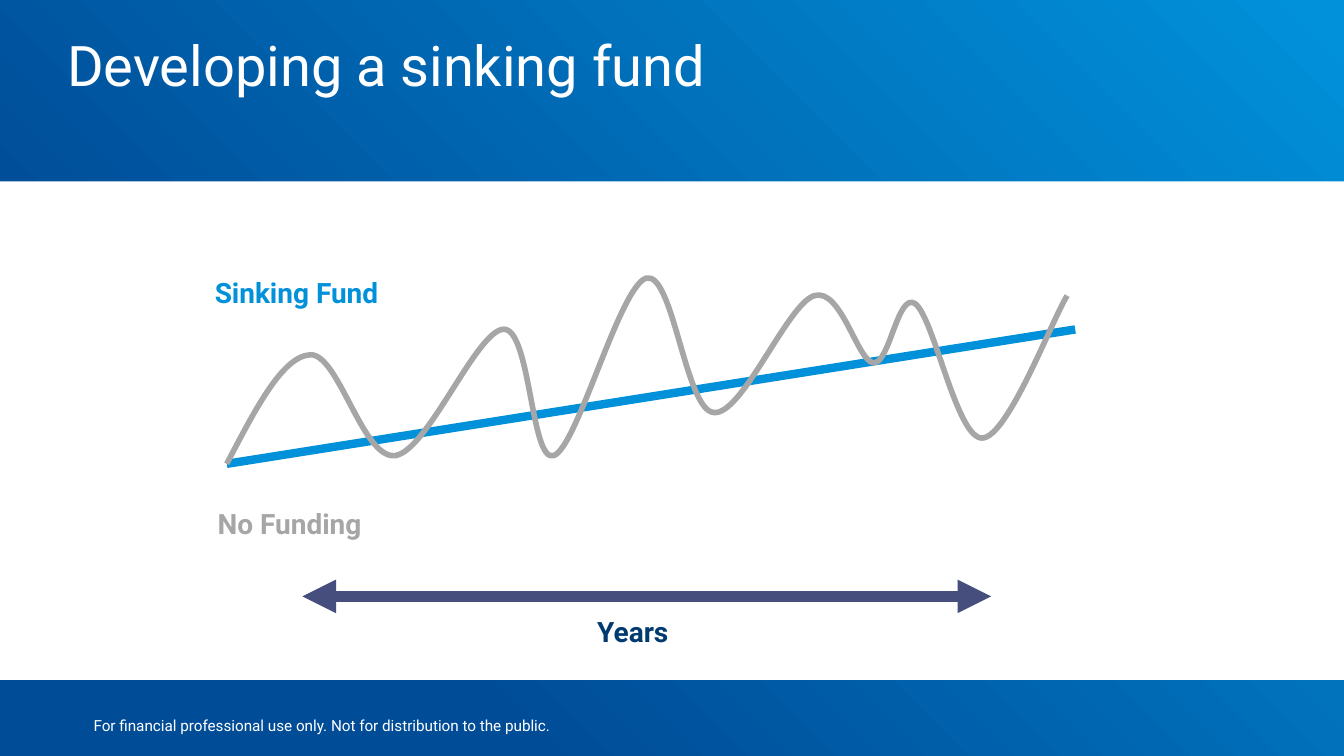
from dataclasses import dataclass

from lxml.etree import SubElement
from pptx import Presentation
from pptx.dml.color import RGBColor
from pptx.enum.shapes import MSO_CONNECTOR as CONN, MSO_SHAPE as SHAPE
from pptx.enum.text import MSO_ANCHOR as ANCHOR, PP_ALIGN as ALIGN
from pptx.oxml.ns import qn
from pptx.util import Pt

W, H = 720, 405
NAVY, BLUE, GREY, WHITE = "004C97", "0091DA", "A6A6A6", "FFFFFF"
INDIGO, DEEP = "464E7E", "003A6E"


@dataclass
class Label:
    text: str
    x: float
    y: float
    w: float
    color: str
    align: ALIGN = ALIGN.LEFT


@dataclass
class Rule:
    x1: float
    y1: float
    x2: float
    y2: float
    color: str
    width: float
    arrows: bool = False


LABELS = [
    Label("Sinking Fund", 108, 144, 117, BLUE),
    Label("No Funding", 109.5, 268, 162, GREY),
    Label("Years", 271.5, 325.5, 135, DEEP, ALIGN.CENTER),
]
FUND_LINE = Rule(121.5, 248.5, 576, 176.5, BLUE, 4.5)
YEARS_ARROW = Rule(162, 319.5, 531, 319.5, INDIGO, 6, arrows=True)

# Start point, then two handles and an end point for each curve
NO_FUNDING = [
    (121.5, 248.5),
    (136.7, 219.5), (151.3, 190.8), (166.3, 190.1),
    (181.4, 189.4), (194.4, 246.2), (211.7, 244.1),
    (229, 241.9), (255.6, 176.4), (270, 176.4),
    (284.4, 176.4), (284.4, 248.5), (296.8, 244.1),
    (309.6, 239), (331.9, 153.4), (346.3, 149),
    (360.7, 145.4), (367.2, 219.6), (382.3, 221),
    (397.4, 223.2), (421.9, 162.7), (436.3, 158.4),
    (450.7, 154.1), (459.4, 193.7), (468, 194.4),
    (476.6, 195.1), (481, 156.2), (490.3, 162.7),
    (500.4, 169.9), (512.6, 235.4), (526.3, 234.7),
    (540, 234), (563, 172.8), (571.7, 158.4),
]


def rgb(color: str) -> RGBColor:
    return RGBColor.from_string(color)


def add_rect(s, x: float, y: float, w: float, h: float):
    sp = s.shapes.add_shape(SHAPE.RECTANGLE, Pt(x), Pt(y), Pt(w), Pt(h))
    sp.shadow.inherit = False
    sp.line.fill.background()
    return sp


def add_text(s, text: str, x: float, y: float, w: float, h: float, *,
             size: float, color: str, bold: bool = False,
             align: ALIGN = ALIGN.LEFT, anchor: ANCHOR = ANCHOR.TOP,
             inset: tuple[float, float] = (7.2, 3.6)) -> None:
    tf = s.shapes.add_textbox(Pt(x), Pt(y), Pt(w), Pt(h)).text_frame
    tf.word_wrap = True
    tf.vertical_anchor = anchor
    tf.margin_left = tf.margin_right = Pt(inset[0])
    tf.margin_top = tf.margin_bottom = Pt(inset[1])
    p = tf.paragraphs[0]
    p.alignment = align
    r = p.add_run()
    r.text = text
    r.font.name, r.font.size, r.font.bold = "Roboto", Pt(size), bold
    r.font.color.rgb = rgb(color)


def add_rule(s, rule: Rule) -> None:
    cx = s.shapes.add_connector(CONN.STRAIGHT, Pt(rule.x1), Pt(rule.y1),
                                Pt(rule.x2), Pt(rule.y2))
    cx.line.color.rgb = rgb(rule.color)
    cx.line.width = Pt(rule.width)
    if rule.arrows:
        ln = cx.line._get_or_add_ln()
        for end in ("a:headEnd", "a:tailEnd"):
            SubElement(ln, qn(end), type="triangle")
    SubElement(cx._element.spPr, qn("a:effectLst"))


def add_curve(s, points: list[tuple[float, float]], color: str,
              width: float) -> None:
    (x, y), *rest = points
    fb = s.shapes.build_freeform(Pt(x), Pt(y))
    fb.add_line_segments([(Pt(px), Pt(py)) for px, py in rest], close=False)
    sp = fb.convert_to_shape()
    sp.shadow.inherit = False
    sp.fill.background()
    sp.line.color.rgb = rgb(color)
    sp.line.width = Pt(width)
    # Join each three straight segments into one Bezier curve
    segments = list(sp._element.iter(qn("a:lnTo")))
    outline = segments[0].getparent()
    for i in range(0, len(segments), 3):
        bezier = SubElement(outline, qn("a:cubicBezTo"))
        for seg in segments[i:i + 3]:
            bezier.append(seg[0])
            outline.remove(seg)


def main() -> None:
    prs = Presentation()
    prs.slide_width, prs.slide_height = Pt(W), Pt(H)
    s = prs.slides.add_slide(prs.slide_layouts[6])

    # Gradient backdrop and white panel
    fill = add_rect(s, 0, 0, W, H).fill
    fill.gradient()
    fill.gradient_angle = 45
    for stop, color, pos in zip(fill.gradient_stops, (NAVY, BLUE), (0.25, 0.99)):
        stop.color.rgb = rgb(color)
        stop.position = pos
    panel = add_rect(s, 0, 97.2, W, 267)
    panel.fill.solid()
    panel.fill.fore_color.rgb = rgb(WHITE)

    # Title and footer
    add_text(s, "Developing a sinking fund", 36, 16.5, 648, 61,
             size=30, color=WHITE, inset=(0, 0))
    add_text(s, "For financial professional use only. "
             "Not for distribution to the public.", 36, 378, 273, 21.6,
             size=8.2, color=WHITE, align=ALIGN.CENTER, anchor=ANCHOR.MIDDLE)

    # Diagram
    add_rule(s, FUND_LINE)
    add_curve(s, NO_FUNDING, GREY, 3)
    add_rule(s, YEARS_ARROW)
    for lb in LABELS:
        add_text(s, lb.text, lb.x, lb.y, lb.w, 25, size=15, color=lb.color,
                 bold=True, align=lb.align)

    prs.save("out.pptx")


if __name__ == "__main__":
    main()
